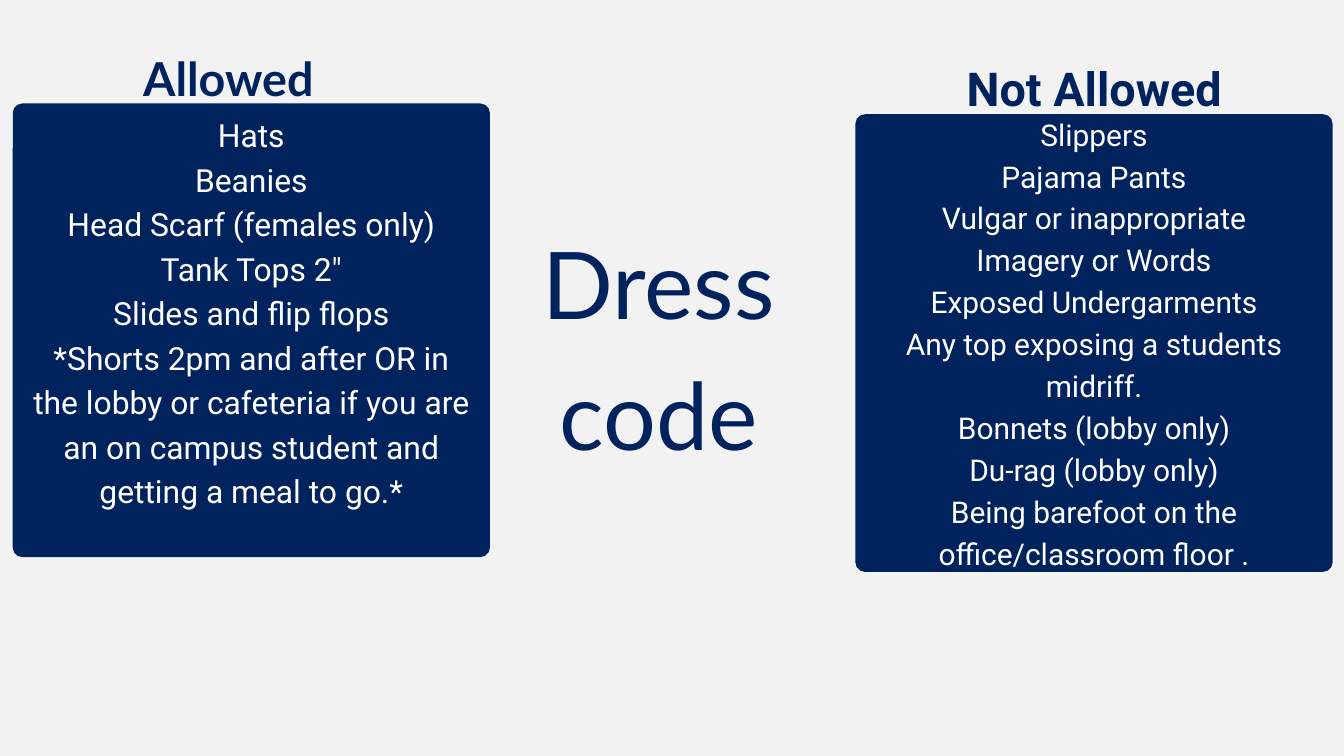
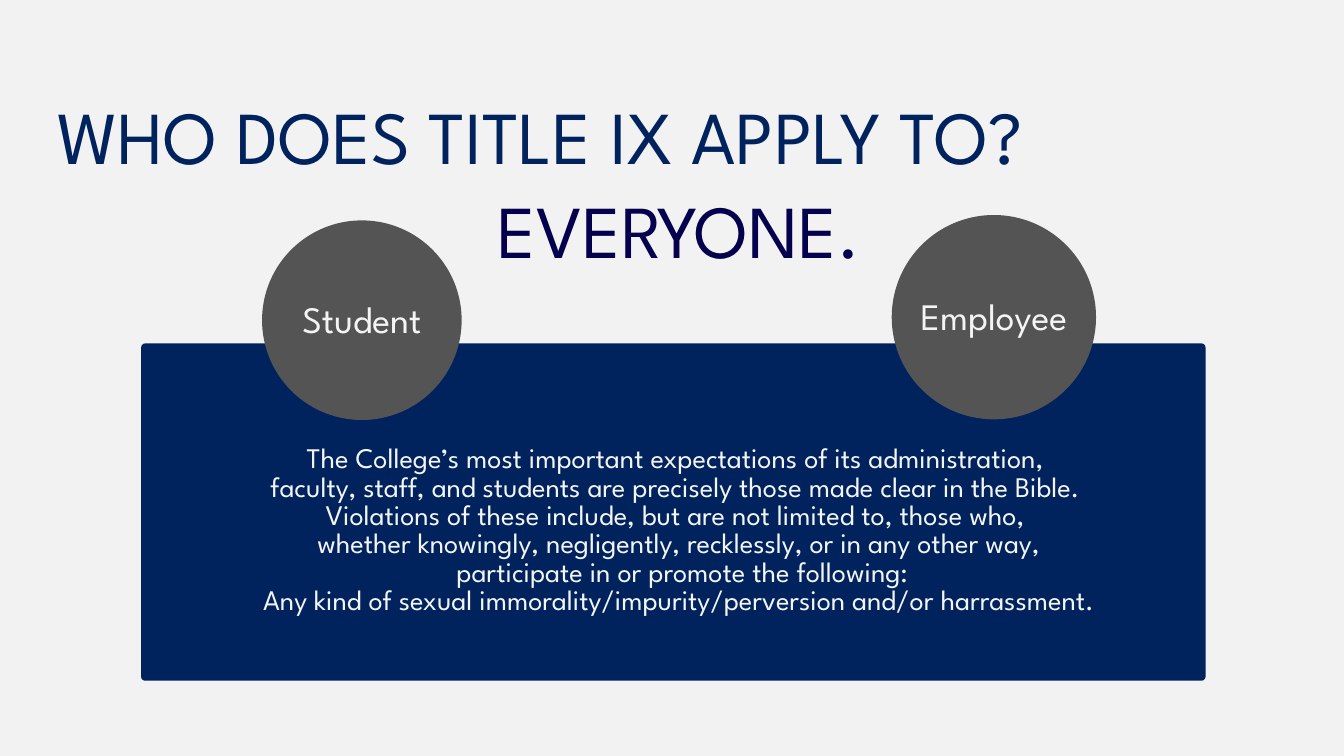
"""Build two student-conduct slides: the dress code and who Title IX applies to."""
from dataclasses import dataclass

from pptx import Presentation
from pptx.dml.color import RGBColor
from pptx.enum.shapes import MSO_SHAPE
from pptx.enum.text import MSO_ANCHOR, MSO_AUTO_SIZE, PP_ALIGN
from pptx.util import Inches, Pt

ROUNDED, OVAL = MSO_SHAPE.ROUNDED_RECTANGLE, MSO_SHAPE.OVAL
LEFT, CENTER = PP_ALIGN.LEFT, PP_ALIGN.CENTER
TOP = MSO_ANCHOR.TOP
NO_AUTOFIT = MSO_AUTO_SIZE.NONE
TITLE_ONLY = 5


@dataclass(frozen=True)
class Theme:
    paper: str = "F2F2F2"
    navy: str = "00235E"
    indigo: str = "05004E"
    gray: str = "545454"
    white: str = "FFFFFF"
    soft_white: str = "F4F4F4"
    lato: str = "Lato"
    roboto: str = "Roboto"
    spartan: str = "League Spartan"
    cover_size: float = 100
    title_size: float = 80
    heading_size: float = 50
    label_size: float = 40
    allowed_size: float = 34.1
    banned_size: float = 32.1
    body_size: float = 30.4


theme = Theme()


def write(box, place, lines, font, size, color, leading=1.4, align=CENTER, bold=False):
    box.left, box.top, box.width, box.height = map(Inches, place)
    frame = box.text_frame
    frame.auto_size = NO_AUTOFIT
    frame.word_wrap = True
    frame.vertical_anchor = TOP
    frame.margin_left = frame.margin_top = frame.margin_right = frame.margin_bottom = 0
    for index, line in enumerate(lines):
        para = frame.add_paragraph() if index else frame.paragraphs[0]
        para.alignment = align
        para.line_spacing = Pt(round(size * leading, 1))
        span = para.add_run()
        span.text = line
        span.font.name = font
        span.font.size = Pt(size)
        span.font.bold = bold
        span.font.color.rgb = RGBColor.from_string(color)


def add_solid(page, kind, place, color, radius=0):
    solid = page.shapes.add_shape(kind, *map(Inches, place))
    solid.shadow.inherit = False
    solid.fill.solid()
    solid.fill.fore_color.rgb = RGBColor.from_string(color)
    solid.line.fill.background()
    if radius:
        solid.adjustments[0] = radius / min(place[2:])


deck = Presentation()
deck.slide_width, deck.slide_height = Inches(20), Inches(11.25)
backdrop = deck.slide_master.background.fill
backdrop.solid()
backdrop.fore_color.rgb = RGBColor.from_string(theme.paper)
layout = deck.slide_layouts[TITLE_ONLY]

dress_page = deck.slides.add_slide(layout)
write(dress_page.shapes.title, (7.29, 3.09, 5.02, 3.82), ["Dress", "code"],
      theme.lato, theme.cover_size, theme.navy)

allowed_rules = [
    "Hats",
    "Beanies",
    "Head Scarf (females only)",
    "Tank Tops 2\"",
    "Slides and flip flops",
    "*Shorts 2pm and after OR in the lobby or cafeteria if you are "
    "an on campus student and getting a meal to go.*",
]
banned_rules = [
    "Slippers",
    "Pajama Pants",
    "Vulgar or inappropriate Imagery or Words",
    "Exposed Undergarments",
    "Any top exposing a students midriff.",
    "Bonnets (lobby only)",
    "Du-rag (lobby only)",
    "Being barefoot on the office/classroom floor .",
]
rule_panels = [
    ("Allowed", theme.lato, (1.12, 0.6, 4.56, 0.94), (0.19, 1.54, 7.1, 6.75),
     allowed_rules, (0.46, 1.63, 6.56, 5.88), theme.allowed_size),
    ("Not Allowed", theme.roboto, (14.2, 0.75, 4.17, 0.94), (12.73, 1.7, 7.1, 6.81),
     banned_rules, (13.18, 1.64, 6.2, 7.35), theme.banned_size),
]
for heading, heading_font, heading_place, panel_place, rules, rules_place, size in rule_panels:
    heading_box = dress_page.shapes.add_textbox(0, 0, 0, 0)
    write(heading_box, heading_place, [heading], heading_font,
          theme.heading_size, theme.navy, bold=True)
    add_solid(dress_page, ROUNDED, panel_place, theme.navy, radius=0.14)
    rules_box = dress_page.shapes.add_textbox(0, 0, 0, 0)
    write(rules_box, rules_place, rules, theme.roboto, size, theme.white)

scope_page = deck.slides.add_slide(layout)
write(scope_page.shapes.title, (0.85, 1.33, 18.21, 1.34), ["WHO DOES TITLE IX APPLY TO?"],
      theme.spartan, theme.title_size, theme.navy, leading=1.2, align=LEFT)
add_solid(scope_page, ROUNDED, (2.1, 5.11, 15.84, 5.02), theme.navy, radius=0.06)

answer_box = scope_page.shapes.add_textbox(0, 0, 0, 0)
write(answer_box, (6.81, 2.51, 6.6, 1.51), ["EVERYONE."],
      theme.spartan, theme.title_size, theme.indigo)

groups = [
    ("Student", (3.9, 3.28, 2.97, 2.97), (4.26, 4.29, 2.25, 0.75)),
    ("Employee", (13.27, 3.2, 3.04, 3.04), (13.39, 4.25, 2.8, 0.75)),
]
for group, circle_place, label_place in groups:
    add_solid(scope_page, OVAL, circle_place, theme.gray)
    label_box = scope_page.shapes.add_textbox(0, 0, 0, 0)
    write(label_box, label_place, [group], theme.spartan, theme.label_size, theme.soft_white)

expectations = [
    "The College’s most important expectations of its administration, ",
    "faculty, staff, and students are precisely those made clear in the Bible. ",
    "Violations of these include, but are not limited to, those who, ",
    "whether knowingly, negligently, recklessly, or in any other way,",
    " participate in or promote the following:",
    "Any kind of sexual immorality/impurity/perversion and/or harrassment.",
]
expectations_box = scope_page.shapes.add_textbox(0, 0, 0, 0)
write(expectations_box, (2.1, 6.64, 16, 2.94), expectations,
      theme.spartan, theme.body_size, theme.soft_white, leading=1)

deck.save("out.pptx")
